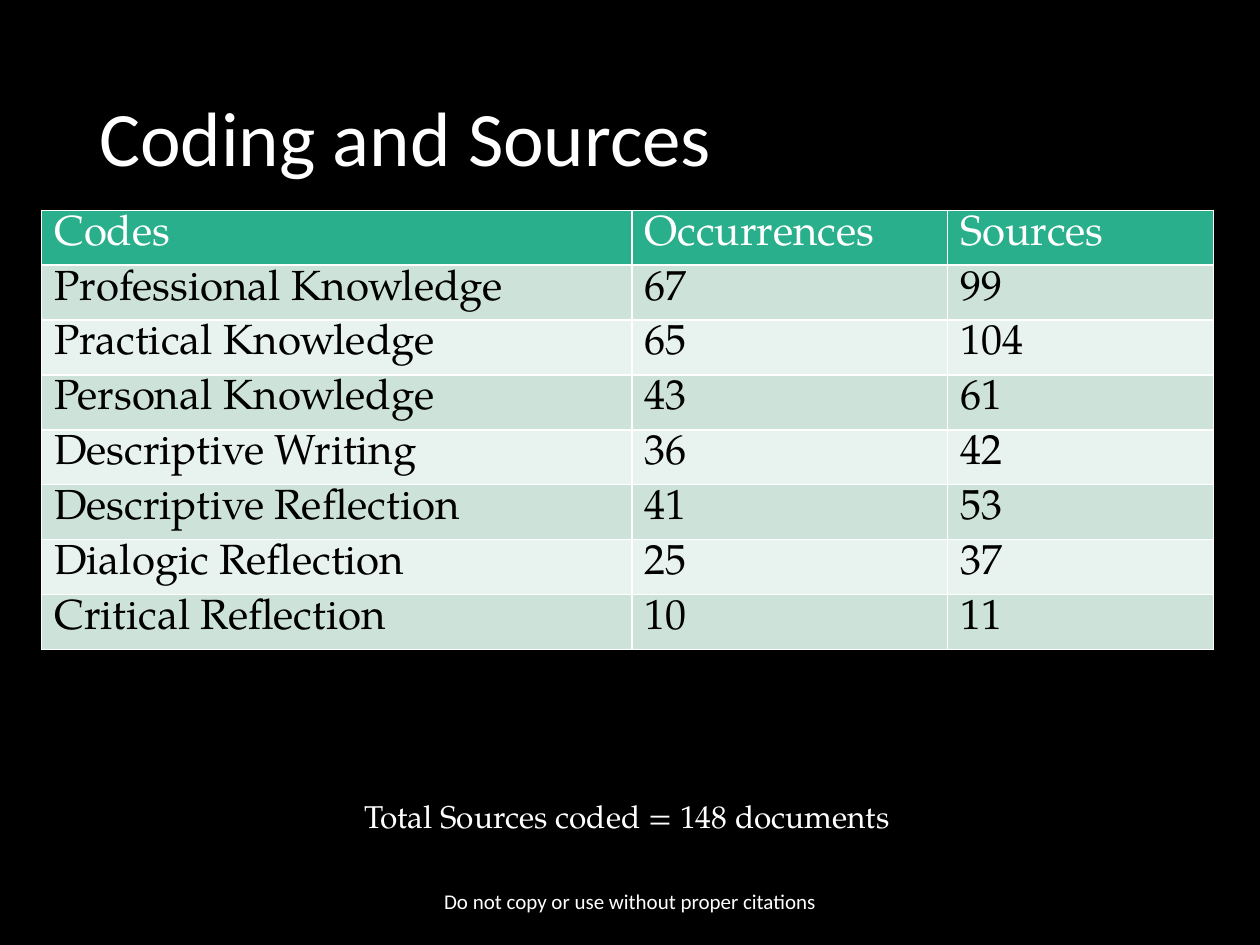
from dataclasses import dataclass
from typing import Optional

from lxml import etree
from pptx import Presentation
from pptx.dml.color import RGBColor
from pptx.enum.text import MSO_ANCHOR, MSO_AUTO_SIZE, PP_ALIGN
from pptx.oxml.ns import qn
from pptx.util import Pt

TOP, MIDDLE = MSO_ANCHOR.TOP, MSO_ANCHOR.MIDDLE
LEFT, CENTER = PP_ALIGN.LEFT, PP_ALIGN.CENTER
FIT_SHAPE = MSO_AUTO_SIZE.SHAPE_TO_FIT_TEXT

COLORS = {
    "background": "000000",
    "light": "FFFFFF",
    "dark": "000000",
    "header": "29AF8C",
    "odd": "CDE3DA",
    "even": "E8F2EE",
}
SANS, SERIF = "Calibri", "TeX Gyre Pagella"
COLUMN_WIDTHS = (337.3, 180.4, 151.9)
ROW_HEIGHT = 29.5
CELL_TOP_MARGIN = 2.55
BORDER_WIDTH = 1
BORDER_TAGS = ("a:lnL", "a:lnR", "a:lnT", "a:lnB")
ROWS = (
    ("Codes", "Occurrences", "Sources"),
    ("Professional Knowledge", "67", "99"),
    ("Practical Knowledge", "65", "104"),
    ("Personal Knowledge", "43", "61"),
    ("Descriptive Writing", "36", "42"),
    ("Descriptive Reflection", "41", "53"),
    ("Dialogic Reflection", "25", "37"),
    ("Critical Reflection", "10", "11"),
)


@dataclass
class Label:
    text: str
    left: float
    top: float
    width: float
    height: float
    size: float
    font: str
    anchor: MSO_ANCHOR = MIDDLE
    align: PP_ALIGN = LEFT
    spacing: Optional[float] = None
    grows: bool = False


LABELS = (
    Label("Coding and Sources", 49.6, 28.8, 620.6, 104.4, 44, SANS, spacing=0.9),
    Label("Total Sources coded = 148 documents", 201.2, 451.8, 317.5, 28.8, 18,
          SERIF, anchor=TOP, grows=True),
    Label("Do not copy or use without proper citations", 238.3, 500.4, 243.4, 28.8,
          12, SANS, align=CENTER),
)


def rgb(name: str) -> RGBColor:
    return RGBColor.from_string(COLORS[name])


def add_run(p, text: str, size: float, font: str, color: str) -> None:
    r = p.add_run()
    r.text = text
    r.font.size = Pt(size)
    r.font.name = font
    r.font.color.rgb = rgb(color)


def add_label(s, label: Label) -> None:
    sp = s.shapes.add_textbox(Pt(label.left), Pt(label.top),
                              Pt(label.width), Pt(label.height))
    tf = sp.text_frame
    tf.word_wrap = not label.grows
    if label.grows:
        tf.auto_size = FIT_SHAPE
    tf.vertical_anchor = label.anchor
    p = tf.paragraphs[0]
    p.alignment = label.align
    if label.spacing:
        p.line_spacing = label.spacing
    add_run(p, label.text, label.size, label.font, "light")


def add_borders(cell) -> None:
    tc_pr = cell._tc.get_or_add_tcPr()
    for i, tag in enumerate(BORDER_TAGS):
        ln = etree.Element(qn(tag), w=str(Pt(BORDER_WIDTH)))
        fill = etree.SubElement(ln, qn("a:solidFill"))
        etree.SubElement(fill, qn("a:srgbClr"), val=COLORS["light"])
        tc_pr.insert(i, ln)


def add_codes_table(s, left: float, top: float) -> None:
    table = s.shapes.add_table(
        len(ROWS), len(COLUMN_WIDTHS), Pt(left), Pt(top),
        Pt(sum(COLUMN_WIDTHS)), Pt(ROW_HEIGHT * len(ROWS))).table
    for column, width in zip(table.columns, COLUMN_WIDTHS):
        column.width = Pt(width)
    for i, values in enumerate(ROWS):
        table.rows[i].height = Pt(ROW_HEIGHT)
        is_header = i == 0
        fill = "header" if is_header else "odd" if i % 2 else "even"
        for j, value in enumerate(values):
            cell = table.cell(i, j)
            cell.margin_top, cell.margin_bottom = Pt(CELL_TOP_MARGIN), Pt(0)
            cell.fill.solid()
            cell.fill.fore_color.rgb = rgb(fill)
            add_borders(cell)
            add_run(cell.text_frame.paragraphs[0], value, 24, SERIF,
                    "light" if is_header else "dark")


def main() -> None:
    prs = Presentation()
    prs.slide_width, prs.slide_height = Pt(720), Pt(540)
    s = prs.slides.add_slide(prs.slide_layouts[6])
    s.background.fill.solid()
    s.background.fill.fore_color.rgb = rgb("background")
    title, *notes = LABELS
    add_label(s, title)
    add_codes_table(s, 23.8, 120.2)
    for note in notes:
        add_label(s, note)
    prs.save("out.pptx")


if __name__ == "__main__":
    main()
